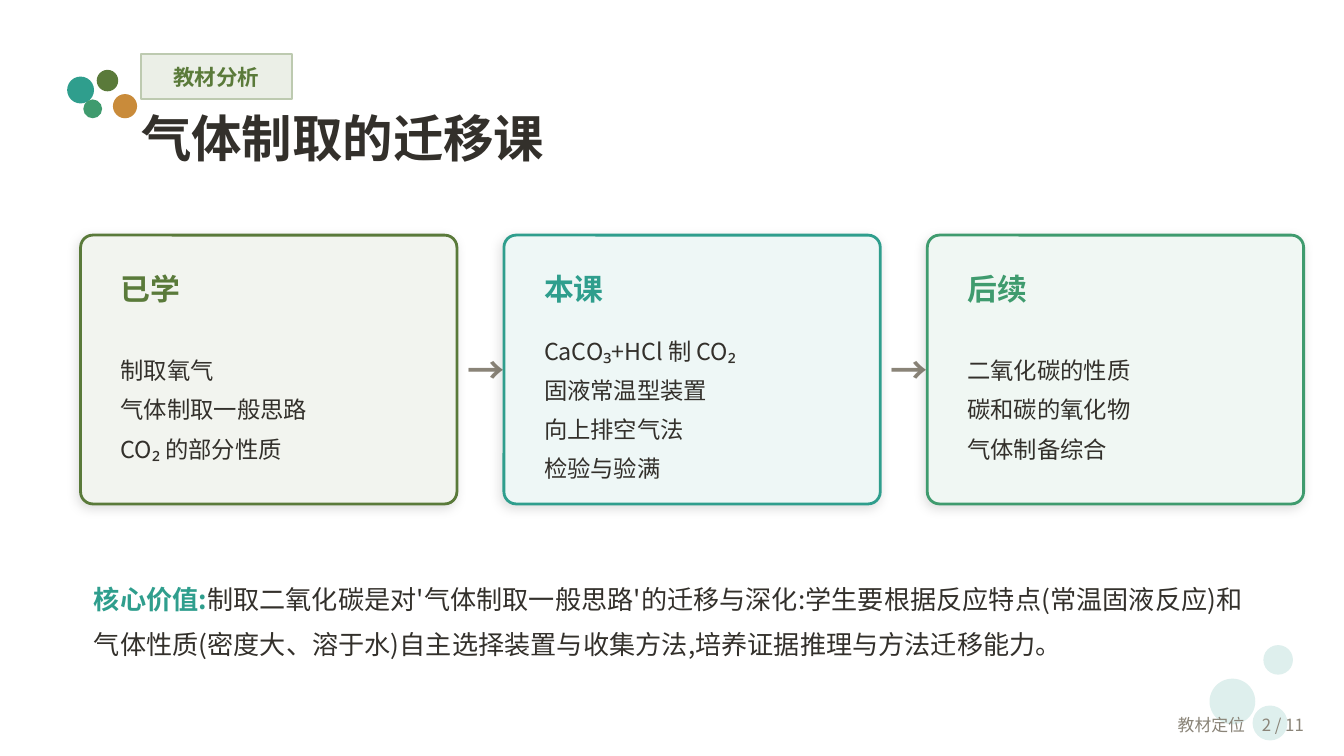
from lxml import etree
from pptx import Presentation
from pptx.dml.color import RGBColor
from pptx.enum.shapes import MSO_SHAPE
from pptx.enum.text import MSO_ANCHOR, MSO_AUTO_SIZE, PP_ALIGN
from pptx.oxml.ns import qn
from pptx.util import Pt

OVAL, RECTANGLE, ROUNDED = MSO_SHAPE.OVAL, MSO_SHAPE.RECTANGLE, MSO_SHAPE.ROUNDED_RECTANGLE
TOP, MIDDLE = MSO_ANCHOR.TOP, MSO_ANCHOR.MIDDLE
LEFT, CENTER, RIGHT = PP_ALIGN.LEFT, PP_ALIGN.CENTER, PP_ALIGN.RIGHT
FONT = "Noto Sans CJK SC"
COLORS = {
    "ink": "33302B", "muted": "8A8478", "teal": "2F9E8D", "olive": "5A7A3A",
    "green": "3F9B6E", "amber": "C98B3A", "bubble": "DEEFED",
    "badge": "EBEFE7", "badge line": "BDCAB0",
    "olive tint": "F2F4EF", "teal tint": "EEF7F6", "green tint": "F0F7F3",
}


def write(shape, text, size=12.5, color="ink", bold=False, align=LEFT,
          anchor=MIDDLE, leading=None, inset=True, lead=""):
    frame = shape.text_frame
    frame.word_wrap = True
    frame.auto_size = MSO_AUTO_SIZE.NONE
    frame.vertical_anchor = anchor
    frame.margin_left = frame.margin_right = Pt(7.2 if inset else 0)
    frame.margin_top = frame.margin_bottom = Pt(3.6 if inset else 0)
    for index, line in enumerate(text.split("\n")):
        para = frame.add_paragraph() if index else frame.paragraphs[0]
        para.alignment = align
        if leading:
            para.line_spacing = Pt(leading)
        parts = [(lead, "teal", True)] if lead else []
        for words, tone, heavy in parts + [(line, color, bold)]:
            span = para.add_run()
            span.text = words
            span.font.size = Pt(size)
            span.font.bold = heavy
            span.font.color.rgb = RGBColor.from_string(COLORS[tone])
            span.font.name = FONT
            latin = span.font._element.find(qn("a:latin"))
            latin.addnext(latin.makeelement(qn("a:ea"), {"typeface": FONT}))


def add_panel(kind, left, top, width, height, fill, line=None, weight=1):
    panel = page.shapes.add_shape(kind, Pt(left), Pt(top), Pt(width), Pt(height))
    panel.shadow.inherit = False
    panel.fill.solid()
    panel.fill.fore_color.rgb = RGBColor.from_string(COLORS[fill])
    if line:
        panel.line.color.rgb = RGBColor.from_string(COLORS[line])
        panel.line.width = Pt(weight)
    else:
        panel.line.fill.background()
    return panel


deck = Presentation()
deck.slide_width, deck.slide_height = Pt(720), Pt(405)
page = deck.slides.add_slide(deck.slide_layouts[5])

bubbles = [
    (648, 363.6, 24.48, "bubble"), (676.8, 345.6, 15.84, "bubble"),
    (671.04, 378, 18.72, "bubble"), (36, 41.04, 14.4, "teal"),
    (51.84, 37.44, 11.52, "olive"), (44.64, 53.28, 10.08, "green"),
    (60.48, 50.4, 12.96, "amber"),
]
for left, top, size, fill in bubbles:
    add_panel(OVAL, left, top, size, size, fill)

badge = add_panel(RECTANGLE, 75.6, 28.8, 80.64, 24.48, "badge", "badge line")
write(badge, "教材分析", size=11.5, color="olive", bold=True, align=CENTER, inset=False)

title = page.shapes.title
title.left, title.top, title.width, title.height = Pt(75.6), Pt(57.6), Pt(604.8), Pt(39.6)
write(title, "气体制取的迁移课", size=27, bold=True, anchor=TOP, inset=False)

stages = [
    ("已学", "olive", "制取氧气\n气体制取一般思路\nCO₂ 的部分性质"),
    ("本课", "teal", "CaCO₃+HCl 制 CO₂\n固液常温型装置\n向上排空气法\n检验与验满"),
    ("后续", "green", "二氧化碳的性质\n碳和碳的氧化物\n气体制备综合"),
]
card_width, card_step = 201.6, 226.8
for index, (heading, color, points) in enumerate(stages):
    left = 43.2 + index * card_step
    card = add_panel(ROUNDED, left, 126, card_width, 144, color + " tint", color, 1.5)
    card.adjustments[0] = 0.045
    effects = card._element.spPr.find(qn("a:effectLst"))
    shadow = etree.SubElement(effects, qn("a:outerShdw"), blurRad=str(Pt(6)),
                              dist=str(Pt(2)), dir="8100000", rotWithShape="0")
    black = etree.SubElement(shadow, qn("a:srgbClr"), val="000000")
    etree.SubElement(black, qn("a:alpha"), val="12000")

    box = page.shapes.add_textbox(Pt(left + 14.4), Pt(140.4), Pt(172.8), Pt(28.8))
    write(box, heading, size=16, color=color, bold=True)
    box = page.shapes.add_textbox(Pt(left + 14.4), Pt(171.36), Pt(172.8), Pt(90))
    write(box, points, leading=21)
    if index < len(stages) - 1:
        box = page.shapes.add_textbox(Pt(left + 200.16), Pt(183.6), Pt(28.8), Pt(28.8))
        write(box, "→", size=20, color="muted", bold=True)

summary = page.shapes.add_textbox(Pt(43.2), Pt(298.8), Pt(637.2), Pt(61.2))
write(summary, "制取二氧化碳是对'气体制取一般思路'的迁移与深化:学生要根据反应特点(常温固液反应)"
      "和气体性质(密度大、溶于水)自主选择装置与收集方法,培养证据推理与方法迁移能力。",
      size=14, leading=24, lead="核心价值:")

footer = page.shapes.add_textbox(Pt(576), Pt(377.28), Pt(129.6), Pt(21.6))
write(footer, "教材定位　2 / 11", size=9, color="muted", align=RIGHT)

deck.save("out.pptx")
